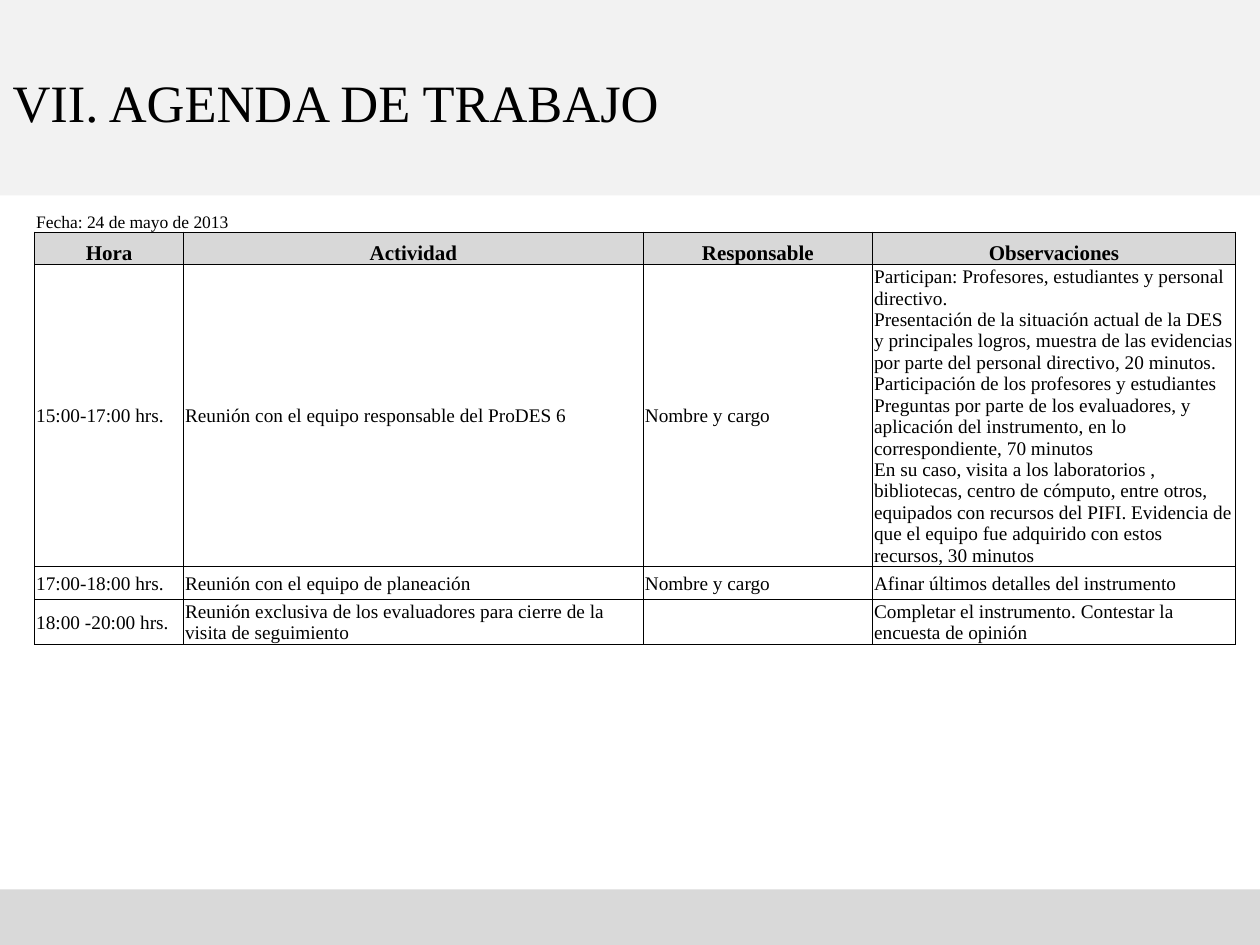
from lxml.etree import SubElement
from pptx import Presentation
from pptx.dml.color import RGBColor
from pptx.enum.shapes import MSO_SHAPE
from pptx.enum.text import MSO_ANCHOR, PP_ALIGN
from pptx.oxml.ns import qn
from pptx.util import Cm, Pt

BLACK = RGBColor(0x00, 0x00, 0x00)
BAND = RGBColor(0xF2, 0xF2, 0xF2)
FOOT = RGBColor(0xD9, 0xD9, 0xD9)
HEAD = RGBColor(0xD8, 0xD8, 0xD8)
FONT = "Times New Roman"

COLS = [3, 9.27, 4.62, 7.32]
ROWS = [0.41, 0.66, 6.05, 0.67, 0.89]
AGENDA = [
    ["Fecha: 24 de mayo de 2013", "", "", ""],
    ["Hora", "Actividad", "Responsable", "Observaciones"],
    ["15:00-17:00 hrs.", "Reunión con el equipo responsable del ProDES 6", "Nombre y cargo", [
        "Participan: Profesores, estudiantes y personal directivo.\v"
        "Presentación de la situación actual de la DES y principales logros, "
        "muestra de las evidencias por parte del personal directivo, 20 minutos.",
        "Participación de los profesores y estudiantes Preguntas por parte de los "
        "evaluadores, y aplicación del instrumento, en lo correspondiente, 70 minutos",
        "En su caso, visita a los laboratorios , bibliotecas, centro de cómputo, entre "
        "otros, equipados con recursos del PIFI. Evidencia de que el equipo fue "
        "adquirido con estos recursos, 30 minutos"]],
    ["17:00-18:00 hrs.", "Reunión con el equipo de planeación", "Nombre y cargo",
     "Afinar últimos detalles del instrumento"],
    ["18:00 -20:00 hrs.",
     "Reunión exclusiva de los evaluadores para cierre de la visita de seguimiento", "",
     "Completar el instrumento. Contestar la encuesta de opinión"],
]
DATE = {"size": Pt(10), "bold": False, "name": FONT}
HEADING = {"size": Pt(12), "bold": True, "name": FONT}
BODY = {"size": Pt(11), "bold": False, "name": FONT}
TITLE = {"size": Pt(30), "bold": False, "name": FONT}
MARGINS = {"margin_left": Cm(0.03), "margin_right": Cm(0.03),
           "margin_top": Cm(0.03), "margin_bottom": 0}


def set_attrs(obj, values):
    """Set each named attribute of an object."""
    for name, value in values.items():
        setattr(obj, name, value)


def format_paragraph(p, fmt, align):
    """Format the runs, line breaks and paragraph end alike."""
    p.alignment = align
    for r in p.runs:
        set_attrs(r.font, fmt)
        r.font.color.rgb = BLACK
    size = str(int(fmt["size"].pt * 100))
    for br in p._p.findall(qn("a:br")):
        SubElement(br, qn("a:rPr"), sz=size)
    SubElement(p._p, qn("a:endParaRPr"), sz=size)


def add_border(cell, sides):
    """Draw thin black lines on the given sides of a cell."""
    tc_pr = cell._tc.get_or_add_tcPr()
    for side in sides:
        ln = SubElement(tc_pr, qn(f"a:ln{side}"), w=str(Pt(0.5)))
        fill = SubElement(ln, qn("a:solidFill"))
        SubElement(fill, qn("a:srgbClr"), val=str(BLACK))


def add_band(s, box, color):
    """Add a plain filled band."""
    sp = s.shapes.add_shape(MSO_SHAPE.RECTANGLE, *map(Cm, box))
    sp.shadow.inherit = False
    sp.fill.solid()
    sp.fill.fore_color.rgb = color
    sp.line.fill.background()


def add_title(s, box, text):
    """Place the title placeholder in front of its band."""
    x, y, w, h = box
    add_band(s, box, BAND)
    sp = s.shapes.title
    set_attrs(sp, {"left": Cm(x), "top": Cm(y + 0.17), "width": Cm(w), "height": Cm(h - 0.17)})
    s.shapes._spTree.append(sp._element)
    tf = sp.text_frame
    tf.text = text
    tf.vertical_anchor = MSO_ANCHOR.MIDDLE
    format_paragraph(tf.paragraphs[0], TITLE, PP_ALIGN.LEFT)


def fill_cell(cell, content, row):
    """Write and format one cell according to its row."""
    fmt = [DATE, HEADING][row] if row < 2 else BODY
    anchor = MSO_ANCHOR.BOTTOM if row < 2 else MSO_ANCHOR.MIDDLE
    set_attrs(cell, {**MARGINS, "vertical_anchor": anchor})
    add_border(cell, "LRTB" if row else "B")
    if row == 1:
        cell.fill.solid()
        cell.fill.fore_color.rgb = HEAD
    else:
        cell.fill.background()
    tf = cell.text_frame
    for i, text in enumerate([content] if isinstance(content, str) else content):
        p = tf.add_paragraph() if i else tf.paragraphs[0]
        p.text = text
        format_paragraph(p, fmt, PP_ALIGN.CENTER if row == 1 else PP_ALIGN.LEFT)


def add_agenda(s, x, y):
    """Add the agenda table with its date line."""
    box = map(Cm, (x, y, sum(COLS), sum(ROWS)))
    table = s.shapes.add_table(len(ROWS), len(COLS), *box).table
    set_attrs(table, {"first_row": False, "horz_banding": False})
    for col, width in zip(table.columns, COLS):
        col.width = Cm(width)
    for row, height in zip(table.rows, ROWS):
        row.height = Cm(height)
    for i, contents in enumerate(AGENDA):
        for j, content in enumerate(contents):
            fill_cell(table.cell(i, j), content, i)
    table.cell(0, 0).merge(table.cell(0, 1))


def main():
    """Build and save the agenda slide."""
    prs = Presentation()
    set_attrs(prs, {"slide_width": Cm(25.4), "slide_height": Cm(19.05)})
    s = prs.slides.add_slide(prs.slide_layouts[5])
    add_title(s, (0, 0, 25.4, 3.94), "VII. AGENDA DE TRABAJO")
    add_band(s, (0, 17.93, 25.4, 1.12), FOOT)
    add_agenda(s, 0.7, 4.22)
    prs.save("out.pptx")


if __name__ == "__main__":
    main()
